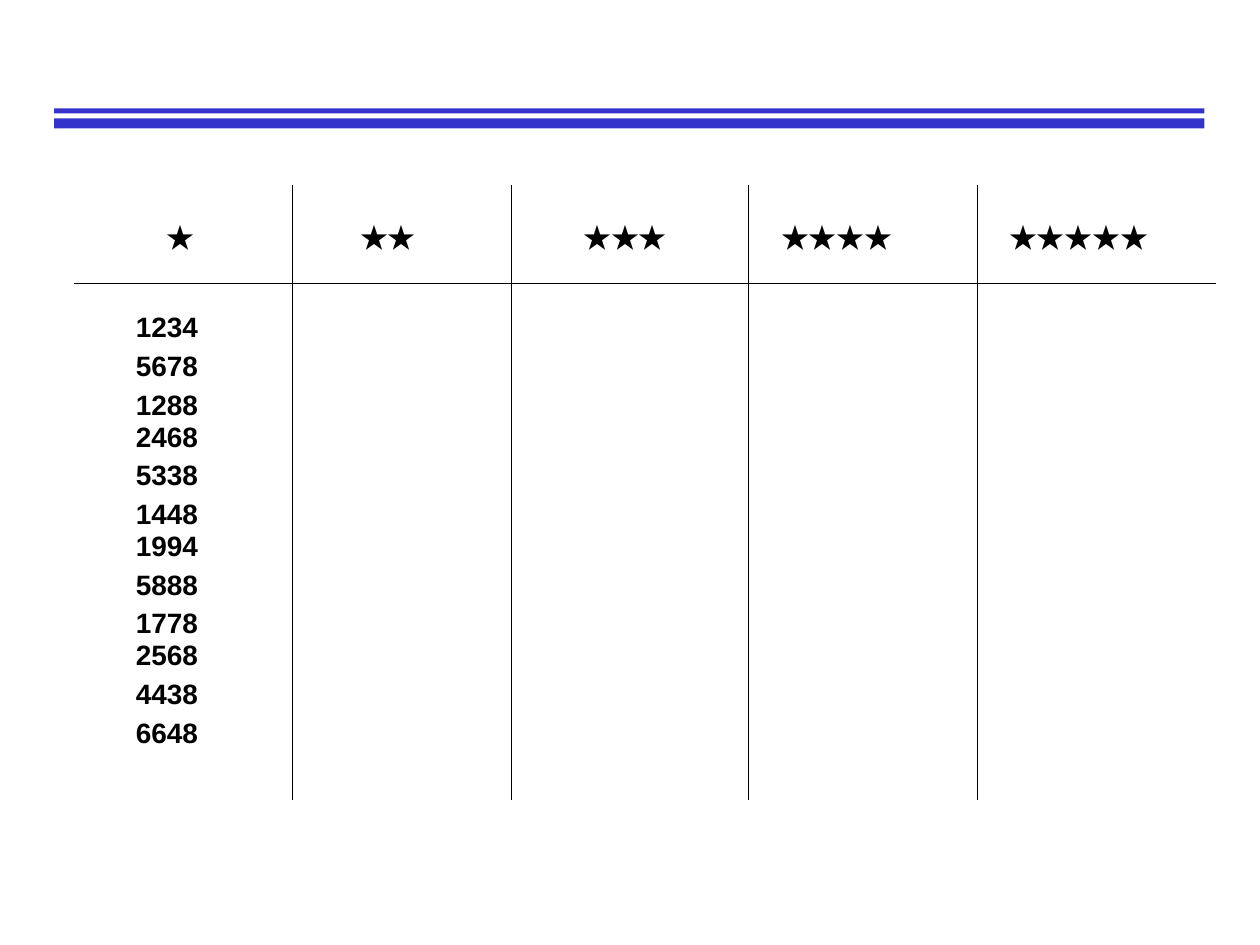
from lxml import etree
from pptx import Presentation
from pptx.dml.color import RGBColor
from pptx.enum.shapes import MSO_CONNECTOR, MSO_SHAPE
from pptx.enum.text import MSO_AUTO_SIZE
from pptx.oxml.ns import qn
from pptx.util import Inches, Pt

STRAIGHT = MSO_CONNECTOR.STRAIGHT
RECTANGLE = MSO_SHAPE.RECTANGLE
GROW = MSO_AUTO_SIZE.SHAPE_TO_FIT_TEXT
BLACK = RGBColor(0x00, 0x00, 0x00)
BLUE = RGBColor(0x33, 0x33, 0xCC)

COLUMNS, ROWS = 100, 75
NUMBER_FONT, STAR_FONT = "Arial", "Noto Sans CJK TC"
DIVIDERS = [23.2, 40.6, 59.4, 77.6]
STAR_BOXES = [(12.2, 4.7), (27.6, 10.6), (45.3, 12.6), (61, 16.5), (79.1, 18.9)]
NUMBER_GROUPS = [
    ["1234", "5678", "1288"],
    ["2468", "5338", "1448"],
    ["1994", "5888", "1778"],
    ["2568", "4438", "6648"],
]
GROUP_PITCH, NUMBER_PITCH = 8.67, 3.08


class SlideBuilder:
    """Draws styled elements on a slide, placed in grid columns and rows."""

    def __init__(self, presentation):
        self.cell_width = presentation.slide_width / COLUMNS
        self.cell_height = presentation.slide_height / ROWS
        self.slide = presentation.slides.add_slide(presentation.slide_layouts[6])

    def place(self, column, row):
        return round(column * self.cell_width), round(row * self.cell_height)

    def bar(self, column, row, width, height):
        shape = self.slide.shapes.add_shape(
            RECTANGLE, *self.place(column, row), *self.place(width, height))
        shape.shadow.inherit = False
        shape.fill.solid()
        shape.fill.fore_color.rgb = BLUE
        shape.line.fill.background()

    def rule(self, start, end):
        connector = self.slide.shapes.add_connector(
            STRAIGHT, *self.place(*start), *self.place(*end))
        connector.line.color.rgb = BLACK
        connector.line.width = Pt(0.75)
        etree.SubElement(connector._element.spPr, qn("a:effectLst"))

    def label(self, text, column, row, width, height, font_name):
        box = self.slide.shapes.add_textbox(
            *self.place(column, row), *self.place(width, height))
        frame = box.text_frame
        frame.word_wrap = True
        frame.auto_size = GROW
        run = frame.paragraphs[0].add_run()
        run.text = text
        run.font.size = Pt(16)
        run.font.bold = True
        run.font.color.rgb = BLACK
        run.font.name = font_name
        east_asian = etree.SubElement(run._r.get_or_add_rPr(), qn("a:ea"))
        east_asian.set("typeface", font_name)


def main():
    presentation = Presentation()
    presentation.slide_width = Inches(10)
    presentation.slide_height = Inches(7.5)
    builder = SlideBuilder(presentation)

    for row, height in [(8.6, 0.4), (9.4, 0.8)]:
        builder.bar(4.3, row, 91.3, height)

    builder.rule((5.9, 22.5), (96.5, 22.5))
    for column in DIVIDERS:
        builder.rule((column, 14.7), (column, 63.5))

    for count, (column, width) in enumerate(STAR_BOXES, start=1):
        builder.label("★" * count, column, 17, width, 5, STAR_FONT)

    for group, numbers in enumerate(NUMBER_GROUPS):
        for index, number in enumerate(numbers):
            row = 24.1 + group * GROUP_PITCH + index * NUMBER_PITCH
            builder.label(number, 9.8, row, 9.4, 5.1, NUMBER_FONT)

    presentation.save("out.pptx")


if __name__ == "__main__":
    main()
